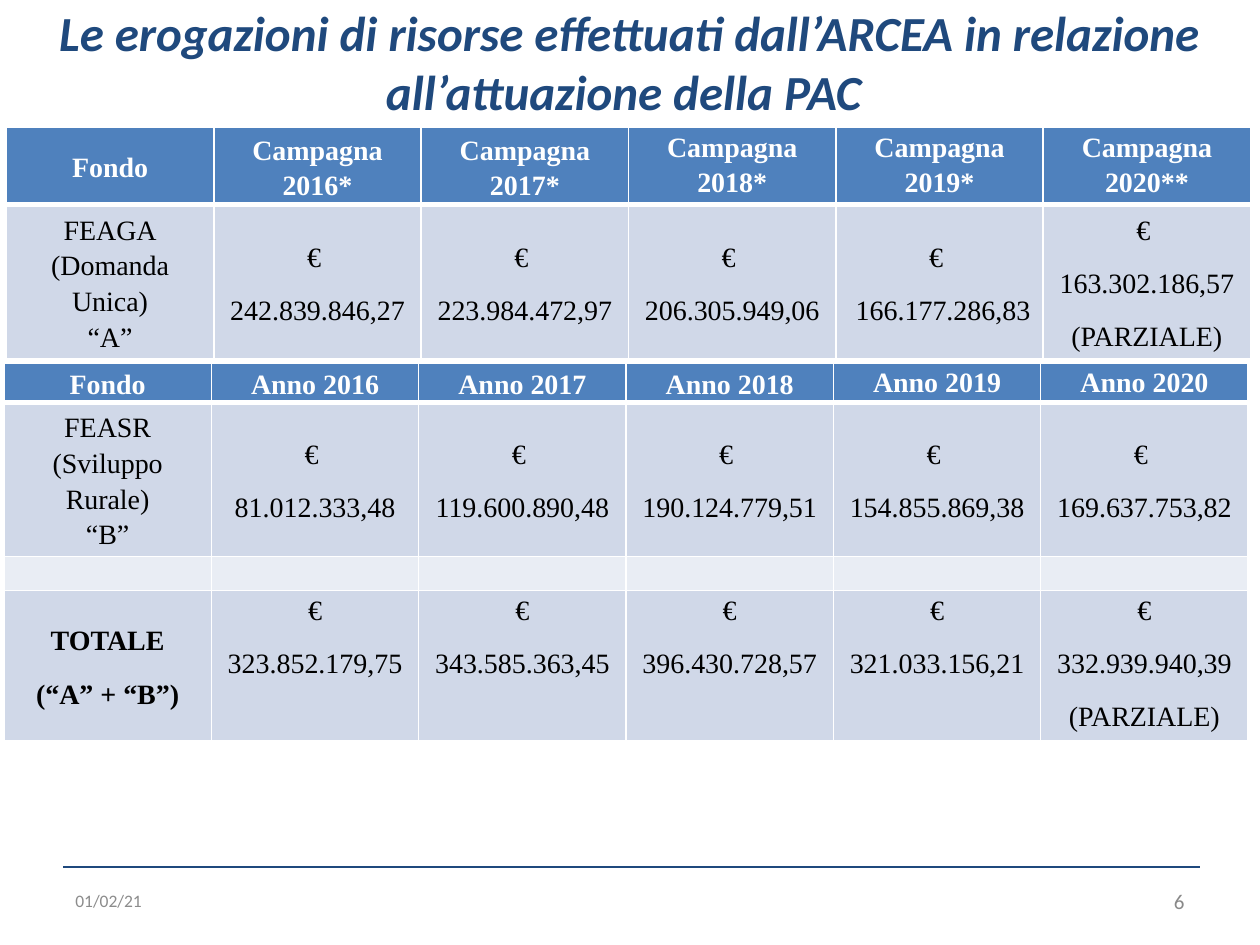
from lxml.etree import SubElement
from pptx import Presentation
from pptx.dml.color import RGBColor
from pptx.enum.shapes import MSO_CONNECTOR as Connector
from pptx.enum.text import MSO_ANCHOR as Anchor, PP_ALIGN as Align
from pptx.oxml.ns import qn
from pptx.util import Cm, Pt

COLORS = {
    "navy": "1F497D",
    "header": "4F81BD",
    "band": "D0D8E8",
    "light": "E9EDF4",
    "white": "FFFFFF",
    "black": "000000",
    "date": "8C8C8C",
    "number": "898989",
}
SERIF = "Times New Roman"
COLUMN_WIDTH = 4.18
EURO = "€ "
PARTIAL = "(PARZIALE)"

FEAGA_AMOUNTS = ["242.839.846,27", "223.984.472,97", "206.305.949,06",
                 " 166.177.286,83", "163.302.186,57"]
FEASR_AMOUNTS = ["81.012.333,48", "119.600.890,48", "190.124.779,51",
                 "154.855.869,38", "169.637.753,82"]
TOTAL_AMOUNTS = ["323.852.179,75", "343.585.363,45", "396.430.728,57",
                 "321.033.156,21", "332.939.940,39"]


def color(name):
    return RGBColor.from_string(COLORS[name])


def write_para(para, text, *, size=16, font=SERIF, ink="black", bold=False,
               italic=False, align=Align.CENTER, spacing=None, after=None):
    para.alignment = align
    para.line_spacing = spacing
    if after is not None:
        para.space_after = Pt(after)
    if not text:
        # An empty line still needs a size, which sets the row height
        SubElement(para._p, qn("a:endParaRPr"), sz=str(size * 100))
        return
    span = para.add_run()
    span.text = text
    span.font.name = font
    span.font.size = Pt(size)
    span.font.bold = bold
    span.font.italic = italic
    span.font.color.rgb = color(ink)


def add_text(page, text, left, top, width, height, anchor=Anchor.TOP, **style):
    box = page.shapes.add_textbox(Cm(left), Cm(top), Cm(width), Cm(height))
    frame = box.text_frame
    frame.word_wrap = True
    frame.vertical_anchor = anchor
    write_para(frame.paragraphs[0], text, font="Calibri", **style)


def add_rule(page, left, right, top):
    rule = page.shapes.add_connector(
        Connector.STRAIGHT, Cm(left), Cm(top), Cm(right), Cm(top))
    rule.line.color.rgb = color("navy")
    rule.line.width = Pt(1.5)
    SubElement(rule._element.spPr, qn("a:effectLst"))


def set_borders(cell, top, bottom):
    properties = cell._tc.get_or_add_tcPr()
    for side, width in (("L", 1), ("R", 1), ("T", top), ("B", bottom)):
        line = SubElement(properties, qn(f"a:ln{side}"), w=str(Pt(width)))
        fill = SubElement(line, qn("a:solidFill"))
        SubElement(fill, qn("a:srgbClr"), val=COLORS["white"])


def fill_cell(cell, lines, fill, anchor=Anchor.MIDDLE, top=1, bottom=1, **style):
    set_borders(cell, top, bottom)
    cell.fill.solid()
    cell.fill.fore_color.rgb = color(fill)
    cell.margin_left = cell.margin_right = Cm(0.18)
    cell.margin_top = cell.margin_bottom = 0
    cell.vertical_anchor = anchor
    frame = cell.text_frame
    for index, text in enumerate(lines):
        para = frame.add_paragraph() if index else frame.paragraphs[0]
        write_para(para, text, spacing=1.15, **style)


def add_table(page, left, top, heights, headers, rows, top_from):
    """Header cells from column top_from on are anchored to the top."""
    frame = page.shapes.add_table(
        len(heights), len(headers), Cm(left), Cm(top),
        Cm(COLUMN_WIDTH * len(headers)), Cm(sum(heights)))
    table = frame.table
    for column in table.columns:
        column.width = Cm(COLUMN_WIDTH)
    for row, height in zip(table.rows, heights):
        row.height = Cm(height)
    for index, text in enumerate(headers):
        fill_cell(table.cell(0, index), [text], "header", bottom=3,
                  anchor=Anchor.TOP if index >= top_from else Anchor.MIDDLE,
                  ink="white", bold=True, after=10)
    for number, cells in enumerate(rows, 1):
        for index, (lines, style) in enumerate(cells):
            fill_cell(table.cell(number, index), lines,
                      top=3 if number == 1 else 1, **style)


def amount_row(label, label_style, amounts, euro=EURO, partial=False,
               anchor=Anchor.MIDDLE):
    cells = [(label, {"fill": "band", **label_style})]
    for amount in amounts:
        lines = [euro, amount]
        if partial and amount == amounts[-1]:
            lines.append(PARTIAL)
        cells.append((lines, {"fill": "band", "after": 10, "anchor": anchor}))
    return cells


def main():
    deck = Presentation()
    deck.slide_width, deck.slide_height = Cm(25.4), Cm(19.05)
    page = deck.slides.add_slide(deck.slide_layouts[6])
    years = range(2016, 2021)

    # Title and footer
    add_rule(page, 1.27, 24.2, 17.48)
    add_text(page, "Le erogazioni di risorse effettuati dall’ARCEA in relazione "
             "all’attuazione della PAC ", 0.25, -0.08, 24.87, 2.06,
             size=28, ink="navy", bold=True, italic=True)
    add_text(page, "01/02/21", 1.27, 17.65, 5.92, 1.02, Anchor.MIDDLE,
             size=10, ink="date", align=Align.LEFT)
    add_text(page, "6", 18.21, 17.65, 5.92, 1.02, Anchor.MIDDLE,
             size=12, ink="number", align=Align.RIGHT)

    # Direct payments by campaign
    campaigns = [f"Campagna {year}{'**' if year == 2020 else '*'}"
                 for year in years]
    feaga = amount_row(["FEAGA", "(Domanda Unica)", "“A”"], {},
                       FEAGA_AMOUNTS, partial=True)
    add_table(page, 0.13, 2.57, [1.43, 2.87], ["Fondo", *campaigns],
              [feaga], top_from=3)

    # Rural development by year, with the grand total
    feasr = amount_row(["FEASR", "(Sviluppo Rurale)", "“B”"], {}, FEASR_AMOUNTS)
    spacer = [([""], {"fill": "light"})] * 6
    total = amount_row(["TOTALE", "(“A” + “B”)"], {"bold": True, "after": 10},
                       TOTAL_AMOUNTS, euro="€", partial=True, anchor=Anchor.TOP)
    add_table(page, 0.08, 7.32, [0.79, 2.87, 0.64, 2.84],
              ["Fondo", *(f"Anno {year}" for year in years)],
              [feasr, spacer, total], top_from=4)

    deck.save("out.pptx")


if __name__ == "__main__":
    main()
